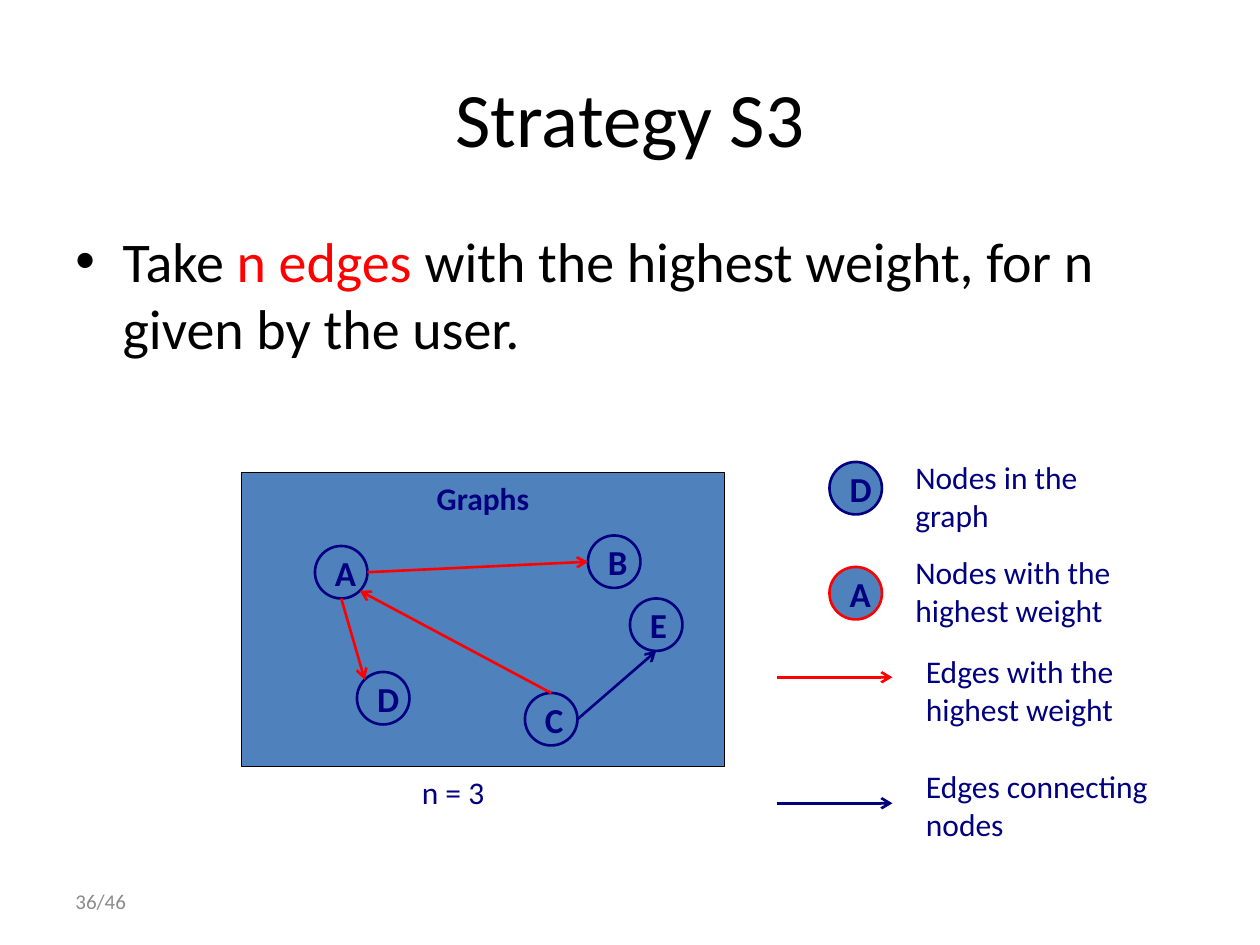
from math import cos, radians, sin

from lxml import etree
from pptx import Presentation
from pptx.dml.color import RGBColor
from pptx.enum.shapes import MSO_CONNECTOR, MSO_SHAPE
from pptx.enum.text import MSO_ANCHOR, PP_ALIGN
from pptx.oxml.ns import qn
from pptx.util import Pt

BLACK = RGBColor(0x00, 0x00, 0x00)
RED = RGBColor(0xFF, 0x00, 0x00)
NAVY = RGBColor(0x00, 0x00, 0x80)
BLUE = RGBColor(0x4F, 0x81, 0xBD)
GRAY = RGBColor(0x8C, 0x8C, 0x8C)
LEFT, CENTER = PP_ALIGN.LEFT, PP_ALIGN.CENTER
TOP, MIDDLE = MSO_ANCHOR.TOP, MSO_ANCHOR.MIDDLE
RECT, OVAL = MSO_SHAPE.RECTANGLE, MSO_SHAPE.OVAL
STRAIGHT = MSO_CONNECTOR.STRAIGHT
FONT = "Calibri"
NODE = 30

BODY = [("Take ", BLACK), ("n edges ", RED),
        ("with the highest weight, for n given by the user.", BLACK)]
GRAPH_BOX = (138, 270, 276, 168)
NODES = {"A": (180, 312), "B": (336, 306), "C": (300, 396),
         "D": (204, 384), "E": (360, 342)}
# Angles on the node's rim, clockwise from the right
RIGHT, LOWER_RIGHT, BOTTOM, LEFT_SIDE, UPPER_LEFT, UPPER = 0, 45, 90, 180, 225, 270
EDGES = [("A", BOTTOM, "D", UPPER_LEFT, RED),
         ("A", RIGHT, "B", LEFT_SIDE, RED),
         ("C", UPPER, "A", LOWER_RIGHT, RED),
         ("C", RIGHT, "E", BOTTOM, NAVY)]
LEGEND_NODES = [("D", 264, NAVY), ("A", 324, RED)]
LEGEND_EDGES = [(387, RED), (459, NAVY)]
LEGEND_TEXT = [("Nodes in the graph", 516, 258, 144),
               ("Nodes with the highest weight", 516, 312.5, 144),
               ("Edges with the highest weight", 522, 369, 144),
               ("Edges connecting nodes", 522, 435, 156)]


def write(sp, runs, size, bold=False, align=LEFT, anchor=TOP):
    tf = sp.text_frame
    tf.word_wrap = True
    tf.vertical_anchor = anchor
    p = tf.paragraphs[0]
    p.alignment = align
    for text, color in runs:
        r = p.add_run()
        r.text = text
        r.font.name = FONT
        r.font.size = Pt(size)
        r.font.bold = bold
        r.font.color.rgb = color
    return p


def add_text(s, box, runs, size, **layout):
    sp = s.shapes.add_textbox(*map(Pt, box))
    return write(sp, runs, size, **layout)


def add_box(s, kind, box, line, width, text, size, anchor=TOP):
    sp = s.shapes.add_shape(kind, *map(Pt, box))
    sp.shadow.inherit = False
    sp.fill.solid()
    sp.fill.fore_color.rgb = BLUE
    sp.line.color.rgb = line
    sp.line.width = Pt(width)
    write(sp, [(text, NAVY)], size, bold=True, align=CENTER, anchor=anchor)


def add_node(s, name, x, y, line=NAVY):
    add_box(s, OVAL, (x, y, NODE, NODE), line, 1.5, name, 20, MIDDLE)


def add_arrow(s, start, end, color):
    c = s.shapes.add_connector(STRAIGHT, *map(Pt, start + end))
    c.line.color.rgb = color
    c.line.width = Pt(1.5)
    etree.SubElement(c.line._get_or_add_ln(), qn("a:tailEnd"), type="arrow")
    etree.SubElement(c._element.spPr, qn("a:effectLst"))


def rim(name, angle):
    """Point on a node's circle at the given angle."""
    x, y = NODES[name]
    radius = NODE / 2
    return (x + radius + radius * cos(radians(angle)),
            y + radius + radius * sin(radians(angle)))


def add_bullet(p, indent):
    pPr = p._p.get_or_add_pPr()
    pPr.set("marL", str(Pt(indent)))
    pPr.set("indent", str(-Pt(indent)))
    etree.SubElement(pPr, qn("a:buFont"), typeface="Arial")
    etree.SubElement(pPr, qn("a:buChar"), char="•")


def main():
    prs = Presentation()
    prs.slide_width, prs.slide_height = Pt(720), Pt(540)
    s = prs.slides.add_slide(prs.slide_layouts[6])

    add_text(s, (36, 21.6, 648, 90), [("Strategy S3", BLACK)], 44,
             align=CENTER, anchor=MIDDLE)
    p = add_text(s, (36, 126, 648, 356.4), BODY, 32)
    p.space_before = Pt(6.4)
    add_bullet(p, 27)

    add_box(s, RECT, GRAPH_BOX, BLACK, 0.75, "Graphs", 18)
    for name, (x, y) in NODES.items():
        add_node(s, name, x, y)
    for tail, out, head, into, color in EDGES:
        add_arrow(s, rim(tail, out), rim(head, into), color)
    add_text(s, (234, 438, 69, 36), [("n = 3", NAVY)], 18)

    for name, y, line in LEGEND_NODES:
        add_node(s, name, 474, y, line)
    for y, color in LEGEND_EDGES:
        add_arrow(s, (444, y), (510, y), color)
    for text, x, y, width in LEGEND_TEXT:
        add_text(s, (x, y, width, 51), [(text, NAVY)], 18)

    add_text(s, (36, 500.5, 168, 28.75), [("36/46", GRAY)], 12, anchor=MIDDLE)
    prs.save("out.pptx")


if __name__ == "__main__":
    main()
